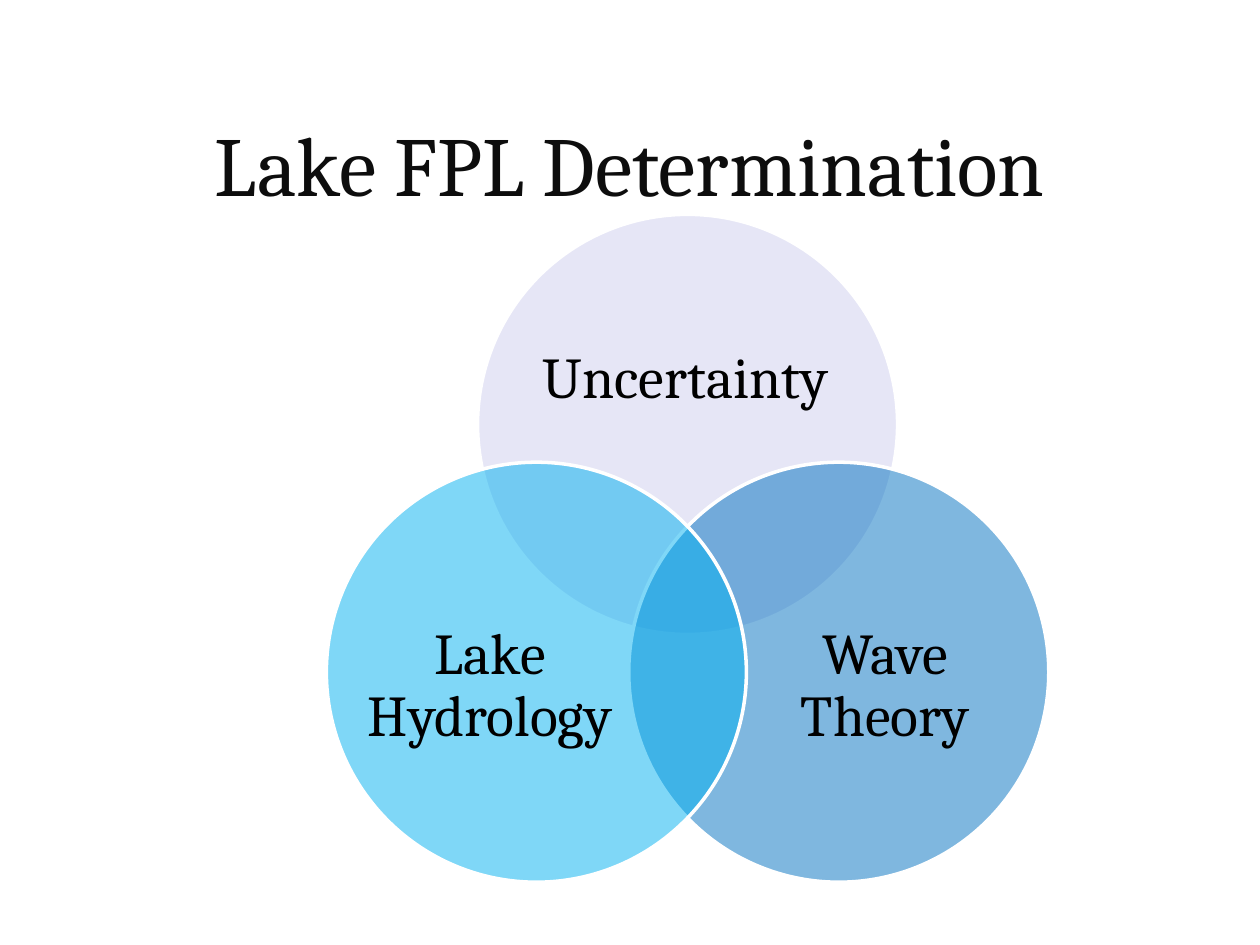
import pptx
import pptx.dml.color
import pptx.enum.shapes
import pptx.enum.text
import pptx.oxml
import pptx.oxml.ns
import pptx.util

Pt = pptx.util.Pt
FONT = "Cambria"

# Name, fill, circle offset and label box, all as fractions of the diameter
CIRCLES = [
    ("Uncertainty", "CECEEF", (0.36, 0), (0.13, 0.17, 0.73, 0.45)),
    ("Wave Theory", "0070C0", (0.72, 0.59), (0.31, 0.26, 0.6, 0.55)),
    ("Lake Hydrology", "00B0F0", (0, 0.59), (0.09, 0.26, 0.6, 0.55)),
]


def color(hex_string):
    return pptx.dml.color.RGBColor.from_string(hex_string)


def add_text(slide, box, text, size, text_color, line_spacing=1.0):
    """Place centred text in a box without margins."""
    text_frame = slide.shapes.add_textbox(*map(Pt, box)).text_frame
    text_frame.word_wrap = True
    text_frame.vertical_anchor = pptx.enum.text.MSO_ANCHOR.MIDDLE
    text_frame.margin_left = text_frame.margin_right = 0
    text_frame.margin_top = text_frame.margin_bottom = 0
    text_frame.text = text
    paragraph = text_frame.paragraphs[0]
    paragraph.alignment = pptx.enum.text.PP_ALIGN.CENTER
    paragraph.line_spacing = line_spacing
    font = paragraph.runs[0].font
    font.name = FONT
    font.size = Pt(size)
    font.color.rgb = color(text_color)


def add_circle(slide, left, top, diameter, fill_color, opacity):
    circle = slide.shapes.add_shape(
        pptx.enum.shapes.MSO_SHAPE.OVAL, *map(Pt, (left, top, diameter, diameter)))
    circle.shadow.inherit = False
    circle.fill.solid()
    circle.fill.fore_color.rgb = color(fill_color)
    fill = circle._element.spPr.find(pptx.oxml.ns.qn("a:solidFill"))
    alpha = pptx.oxml.parse_xml(
        f'<a:alpha {pptx.oxml.ns.nsdecls("a")} val="{opacity * 1000}"/>')
    fill[0].append(alpha)
    circle.line.color.rgb = color("FFFFFF")
    circle.line.width = Pt(2)


def add_venn(slide, left, top, diameter):
    for name, fill_color, (across, down), (x, y, width, height) in CIRCLES:
        circle_left = left + across * diameter
        circle_top = top + down * diameter
        add_circle(slide, circle_left, circle_top, diameter, fill_color, 50)
        label_box = (circle_left + x * diameter, circle_top + y * diameter,
                     width * diameter, height * diameter)
        add_text(slide, label_box, name, 33, "000000", 0.9)


def main():
    presentation = pptx.Presentation()
    presentation.slide_width = Pt(720)
    presentation.slide_height = Pt(540)
    slide = presentation.slides.add_slide(presentation.slide_layouts[6])
    add_text(slide, (54, 48, 612, 90), "Lake FPL Determination", 48, "0D0D0D")
    add_venn(slide, left=186.5, top=122.5, diameter=240)
    presentation.save("out.pptx")


if __name__ == "__main__":
    main()
